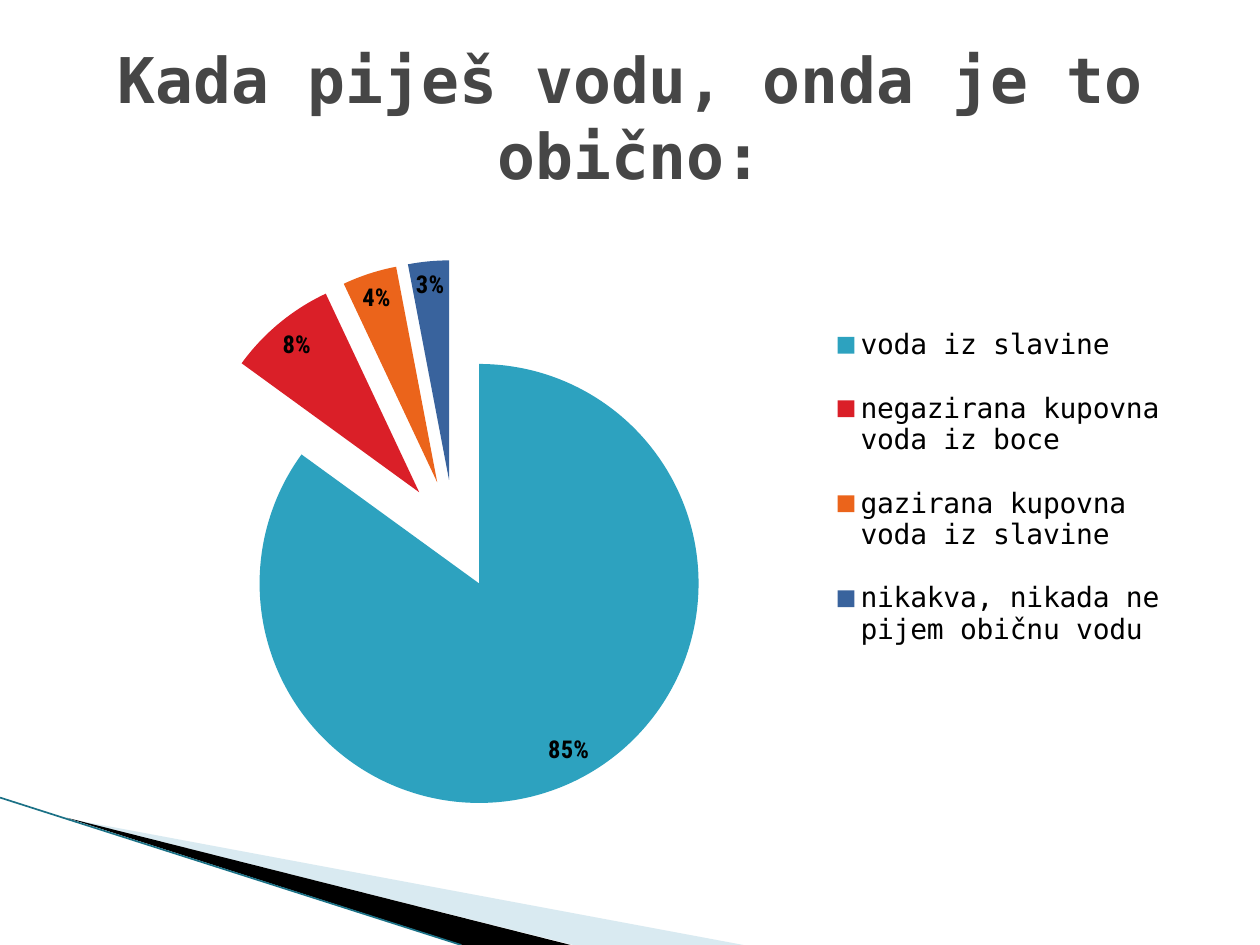
import pptx
import pptx.chart.data
import pptx.dml.color
import pptx.enum.chart
import pptx.enum.shapes
import pptx.enum.text
import pptx.oxml
import pptx.oxml.ns
import pptx.util
from dataclasses import dataclass
from lxml import etree


@dataclass(frozen=True)
class Theme:
    mono: str = "DejaVu Sans Mono"
    condensed: str = "Roboto Condensed"
    title_size: int = 36
    chart_size: int = 18
    legend_size: int = 16
    label_size: int = 14
    title: str = "464646"
    text: str = "000000"
    pale_ray: str = "A0CBDC"
    dark_ray: str = "000000"
    edge: str = "1B7186"
    slices: tuple = ("2DA2BF", "DA1F28", "EB641B", "39639D")


THEME = Theme()
WIDTH, HEIGHT = 10, 7.5
ANSWERS = {
    "voda iz slavine": 85,
    "negazirana kupovna voda iz boce": 8,
    "gazirana kupovna voda iz slavine": 4,
    "nikakva, nikada ne pijem običnu vodu": 3,
}


def rgb(value):
    return pptx.dml.color.RGBColor.from_string(value)


def inches(*lengths):
    return [pptx.util.Inches(length) for length in lengths]


def format_font(font, name, size, color, bold=False):
    font.name, font.size, font.bold = name, pptx.util.Pt(size), bold
    font.color.rgb = rgb(color)


def write_text(frame, text, align=pptx.enum.text.PP_ALIGN.CENTER, **font_format):
    frame.word_wrap = True
    frame.auto_size = pptx.enum.text.MSO_AUTO_SIZE.NONE
    frame.vertical_anchor = pptx.enum.text.MSO_ANCHOR.MIDDLE
    paragraph = frame.paragraphs[0]
    paragraph.alignment = align
    run = paragraph.add_run()
    run.text = text
    format_font(run.font, **font_format)


def add_title(slide, text):
    title = slide.shapes.title
    title.left, title.top, title.width, title.height = inches(0.5, 0.3, 9, 1.25)
    write_text(title.text_frame, text, name=THEME.mono, size=THEME.title_size,
               color=THEME.title, bold=True)


def add_ray(slide, corners, color, opacity=100):
    start, *others = [inches(*corner) for corner in corners]
    builder = slide.shapes.build_freeform(*start)
    builder.add_line_segments(others, close=True)
    ray = builder.convert_to_shape()
    ray.shadow.inherit = False
    ray.fill.solid()
    ray.fill.fore_color.rgb = rgb(color)
    ray.line.fill.background()
    if opacity < 100:
        fill_color = ray.fill._xPr.find(".//" + pptx.oxml.ns.qn("a:srgbClr"))
        etree.SubElement(fill_color, pptx.oxml.ns.qn("a:alpha"), val=str(opacity * 1000))


def add_edge(slide, start, end):
    edge = slide.shapes.add_connector(
        pptx.enum.shapes.MSO_CONNECTOR.STRAIGHT, *inches(*start, *end))
    edge.line.color.rgb = rgb(THEME.edge)
    edge.line.width = pptx.util.Pt(0.95)
    etree.SubElement(edge._element.spPr, pptx.oxml.ns.qn("a:effectLst"))


def manual_layout(x, y, w, h, inner=False):
    """Layout element whose place and size are shares of the chart's size."""
    target = '<c:layoutTarget val="inner"/>' if inner else ""
    modes = '<c:xMode val="edge"/><c:yMode val="edge"/>'
    sizes = "".join(f'<c:{key} val="{share}"/>'
                    for key, share in zip("xywh", (x, y, w, h)))
    return pptx.oxml.parse_xml(
        f'<c:layout {pptx.oxml.ns.nsdecls("c")}><c:manualLayout>'
        f'{target}{modes}{sizes}</c:manualLayout></c:layout>')


def place_chart_parts(chart):
    plot_area = chart._chartSpace.chart.plotArea
    legend = chart.legend._element
    for part in (plot_area, legend):
        for layout in part.findall(pptx.oxml.ns.qn("c:layout")):
            part.remove(layout)
    plot_area.insert(0, manual_layout(0.1, 0.09, 0.49, 0.88, inner=True))
    position = legend.find(pptx.oxml.ns.qn("c:legendPos"))
    position.addnext(manual_layout(0.67, 0.15, 0.31, 0.61))


def explode(series, percent):
    """Pull every slice out, in the series and in each point format."""
    def explosion():
        return etree.Element(pptx.oxml.ns.qn("c:explosion"), val=str(percent))

    points = series._element.findall(pptx.oxml.ns.qn("c:dPt"))
    points[0].addprevious(explosion())
    for point in points:
        point.find(pptx.oxml.ns.qn("c:spPr")).addprevious(explosion())


def add_answer_pie(slide, answers):
    data = pptx.chart.data.CategoryChartData()
    data.categories = list(answers)
    data.add_series("Series 1", list(answers.values()))
    chart = slide.shapes.add_chart(
        pptx.enum.chart.XL_CHART_TYPE.PIE, *inches(0.5, 1.62, 9, 4.95), data).chart
    format_font(chart.font, THEME.mono, THEME.chart_size, THEME.text)
    chart.has_title = False

    chart.has_legend = True
    chart.legend.position = pptx.enum.chart.XL_LEGEND_POSITION.RIGHT
    chart.legend.include_in_layout = False
    format_font(chart.legend.font, THEME.mono, THEME.legend_size, THEME.text)

    plot = chart.plots[0]
    plot.vary_by_categories = True
    series = plot.series[0]
    for index, color in enumerate(THEME.slices):
        fill = series.points[index].format.fill
        fill.solid()
        fill.fore_color.rgb = rgb(color)
    explode(series, 25)

    labels = series.data_labels
    labels.show_percentage, labels.show_value = True, False
    labels.number_format, labels.number_format_is_linked = "0%", False
    labels.position = pptx.enum.chart.XL_LABEL_POSITION.BEST_FIT
    format_font(labels.font, THEME.condensed, THEME.label_size, THEME.text, bold=True)
    place_chart_parts(chart)


def main():
    deck = pptx.Presentation()
    deck.slide_width, deck.slide_height = inches(WIDTH, HEIGHT)
    slide = deck.slides.add_slide(deck.slide_layouts[5])
    add_ray(slide, [(0.55, 6.5), (5.9, HEIGHT), (4.55, HEIGHT)], THEME.pale_ray, 40)
    add_ray(slide, [(0.53, 6.49), (4.53, HEIGHT), (3.67, HEIGHT)], THEME.dark_ray)
    add_edge(slide, (0, 6.33), (3.66, HEIGHT))
    add_title(slide, "Kada piješ vodu, onda je to obično:")
    add_answer_pie(slide, ANSWERS)
    deck.save("out.pptx")


if __name__ == "__main__":
    main()
